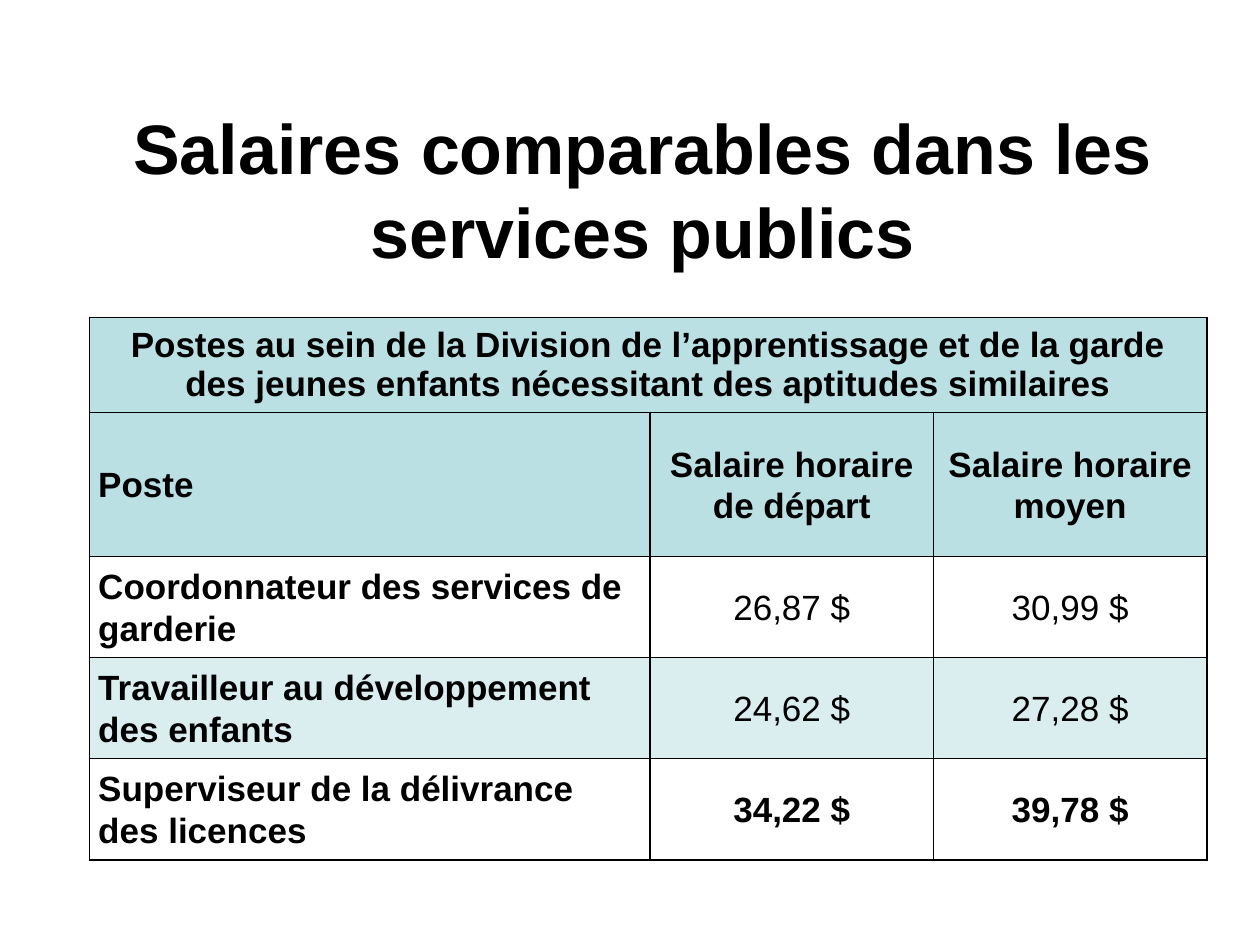
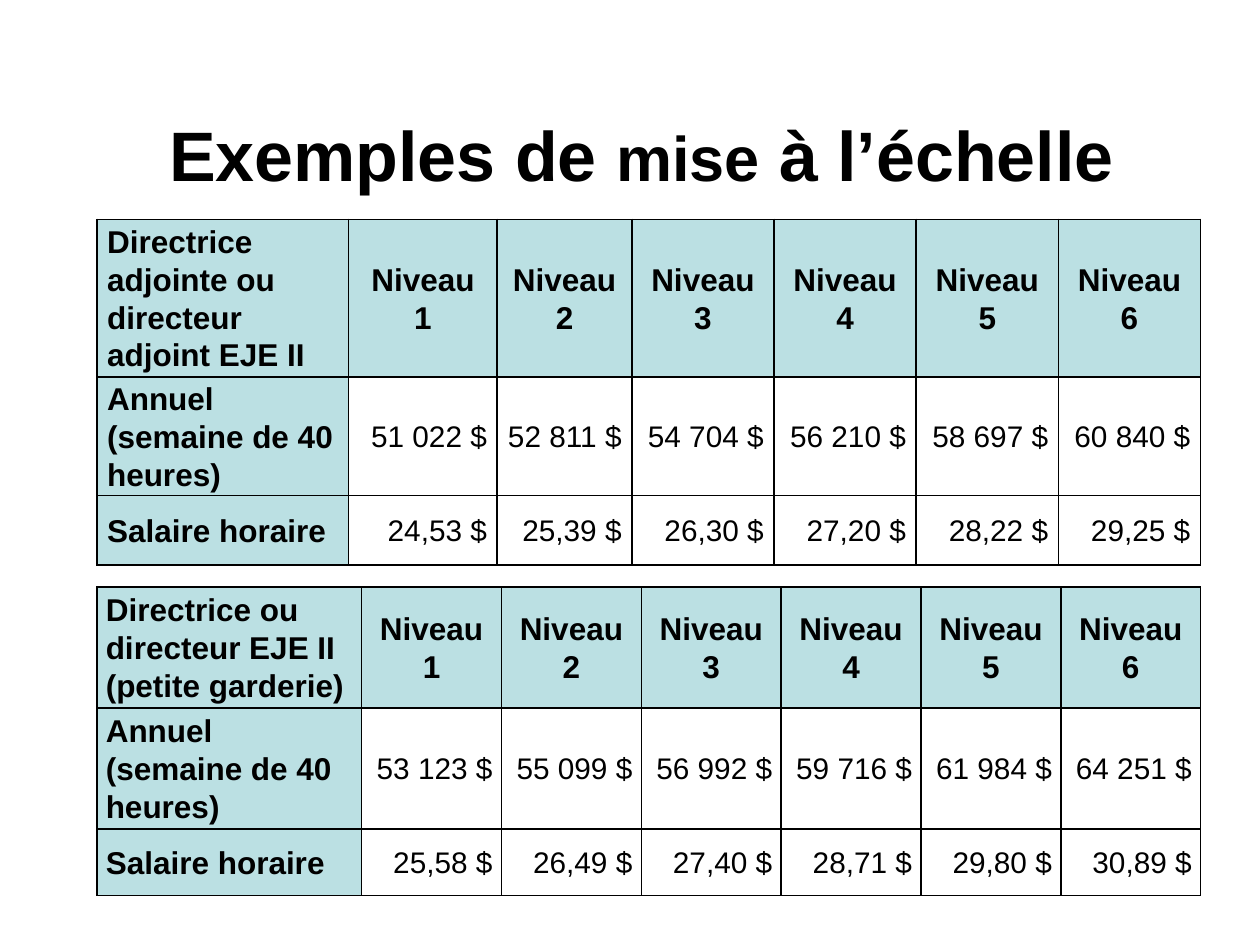
from dataclasses import dataclass

from lxml import etree
from pptx import Presentation, util as u
from pptx.dml.color import RGBColor
from pptx.enum import text
from pptx.oxml import ns


@dataclass(frozen=True)
class Theme:
    font: str = "Arial"
    ink: str = "000000"
    head: str = "BBE0E3"
    band: str = "DAEDEF"
    paper: str = "FFFFFF"
    title: int = 40
    title_small: int = 36
    label: int = 20
    grid_label: int = 18
    grid_value: int = 17
    spacing: float = 1.07
    border: float = 1


T = Theme()
LEFT, CENTER, RIGHT = text.PP_ALIGN.LEFT, text.PP_ALIGN.CENTER, text.PP_ALIGN.RIGHT
SLIDE_W, SLIDE_H = u.Inches(10), u.Inches(7.5)
LEVELS = [f"Niveau {n}" for n in range(1, 7)]


def to_slide(box):
    """Turn shares of the slide (left, top, width, height) into lengths."""
    return [int(share * side) for share, side in zip(box, (SLIDE_W, SLIDE_H) * 2)]


def style(p, size, bold, align, spacing=T.spacing):
    p.alignment = align
    p.line_spacing = spacing
    for r in p.runs:
        r.font.name = T.font
        r.font.size = u.Pt(size)
        r.font.bold = bold
        r.font.color.rgb = RGBColor.from_string(T.ink)


def add_title(s, box, parts, bottom=0.05):
    """Fill the title placeholder with (wording, size) parts."""
    sp = s.shapes.title
    sp.left, sp.top, sp.width, sp.height = to_slide(box)
    tf = sp.text_frame
    tf.auto_size = text.MSO_AUTO_SIZE.NONE
    tf.word_wrap = True
    tf.vertical_anchor = text.MSO_ANCHOR.MIDDLE
    tf.margin_bottom = u.Inches(bottom)
    p = tf.paragraphs[0]
    for wording, _ in parts:
        p.add_run().text = wording
    style(p, T.title, True, CENTER, 1.0)
    for r, (_, size) in zip(p.runs, parts):
        r.font.size = u.Pt(size)


def add_borders(cell):
    props = cell._tc.get_or_add_tcPr()
    for i, side in enumerate(("lnL", "lnR", "lnT", "lnB")):
        line = etree.Element(ns.qn(f"a:{side}"), w=str(u.Pt(T.border)))
        fill = etree.SubElement(line, ns.qn("a:solidFill"))
        etree.SubElement(fill, ns.qn("a:srgbClr"), val=T.ink)
        props.insert(i, line)


def fill_cell(cell, wording, fill, inset, size, bold, align, spacing=T.spacing):
    cell.fill.solid()
    cell.fill.fore_color.rgb = RGBColor.from_string(fill)
    cell.margin_left = cell.margin_right = u.Inches(inset)
    cell.margin_top = cell.margin_bottom = 0
    cell.vertical_anchor = text.MSO_ANCHOR.MIDDLE
    cell.text_frame.text = wording
    for p in cell.text_frame.paragraphs:
        style(p, size, bold, align, spacing)


def add_grid(s, box, cols, rows):
    """Add a bordered table whose columns and rows share the box by weight."""
    x, y, w, h = to_slide(box)
    table = s.shapes.add_table(len(rows), len(cols), x, y, w, h).table
    table.first_row = table.horz_banding = False
    for col, weight in zip(table.columns, cols):
        col.width = int(w * weight / sum(cols))
    for row, weight in zip(table.rows, rows):
        row.height = int(h * weight / sum(rows))
    for cell in table.iter_cells():
        add_borders(cell)
    return table


def add_wage_table(s, box, caption, headings, jobs):
    """Caption over all columns, headings, then banded rows of jobs."""
    table = add_grid(s, box, (4.45, 2.25, 2.17), (0.75, 1.14) + (0.8,) * len(jobs))
    table.cell(0, 0).merge(table.cell(0, 2))
    fill_cell(table.cell(0, 0), caption, T.head, 0.07, T.label, True, CENTER, 1.0)
    for i, row in enumerate([headings, *jobs]):
        fill = T.head if i == 0 else T.band if i == 2 else T.paper
        for j, wording in enumerate(row):
            bold = j == 0 or i in (0, len(jobs))
            fill_cell(table.cell(i + 1, j), wording, fill, 0.07, T.label, bold,
                      CENTER if j else LEFT)


def add_scale_table(s, box, cols, rows, inset, post, annual, hourly):
    """Pay levels across, yearly and hourly pay down."""
    table = add_grid(s, box, cols, rows)
    content = ([post, *LEVELS],
               ["Annuel\n(semaine de 40 heures)", *annual],
               ["Salaire horaire", *hourly])
    for i, row in enumerate(content):
        for j, wording in enumerate(row):
            label = i == 0 or j == 0
            fill_cell(table.cell(i, j), wording, T.head if label else T.paper, inset,
                      T.grid_label if label else T.grid_value, label,
                      LEFT if j == 0 else CENTER if i == 0 else RIGHT)


def build_wages(s):
    add_title(s, (0.071, 0.157, 0.878, 0.167),
              [("Salaires comparables dans les services publics", T.title)], bottom=0.67)
    add_wage_table(
        s, (0.071, 0.336, 0.887, 0.574),
        "Postes au sein de la Division de l’apprentissage et de la garde "
        "des jeunes enfants nécessitant des aptitudes similaires",
        ("Poste", "Salaire horaire de départ", "Salaire horaire moyen"),
        [("Coordonnateur des services de garderie", "26,87 $", "30,99 $"),
         ("Travailleur au développement des enfants", "24,62 $", "27,28 $"),
         ("Superviseur de la délivrance des licences", "34,22 $", "39,78 $")])


def build_scales(s):
    add_title(s, (0.07, 0.107, 0.878, 0.111),
              [("Exemples de ", T.title), ("mise", T.title_small), (" à l’échelle", T.title)])
    # Assistant director
    add_scale_table(
        s, (0.077, 0.232, 0.876, 0.366),
        (2, 1.18, 1.07) + (1.13,) * 4, (1.25, 0.94, 0.55), 0.08,
        "Directrice adjointe ou directeur adjoint EJE II",
        ("51 022 $", "52 811 $", "54 704 $", "56 210 $", "58 697 $", "60 840 $"),
        ("24,53 $", "25,39 $", "26,30 $", "27,20 $", "28,22 $", "29,25 $"))
    # Director of a small centre
    add_scale_table(
        s, (0.077, 0.621, 0.876, 0.327),
        (2.1,) + (1.11,) * 6, (0.96, 0.96, 0.53), 0.07,
        "Directrice ou directeur EJE II (petite garderie)",
        ("53 123 $", "55 099 $", "56 992 $", "59 716 $", "61 984 $", "64 251 $"),
        ("25,58 $", "26,49 $", "27,40 $", "28,71 $", "29,80 $", "30,89 $"))


def main():
    prs = Presentation()
    prs.slide_width, prs.slide_height = SLIDE_W, SLIDE_H
    title_only = prs.slide_layouts[5]
    for build in (build_wages, build_scales):
        build(prs.slides.add_slide(title_only))
    prs.save("out.pptx")


if __name__ == "__main__":
    main()
